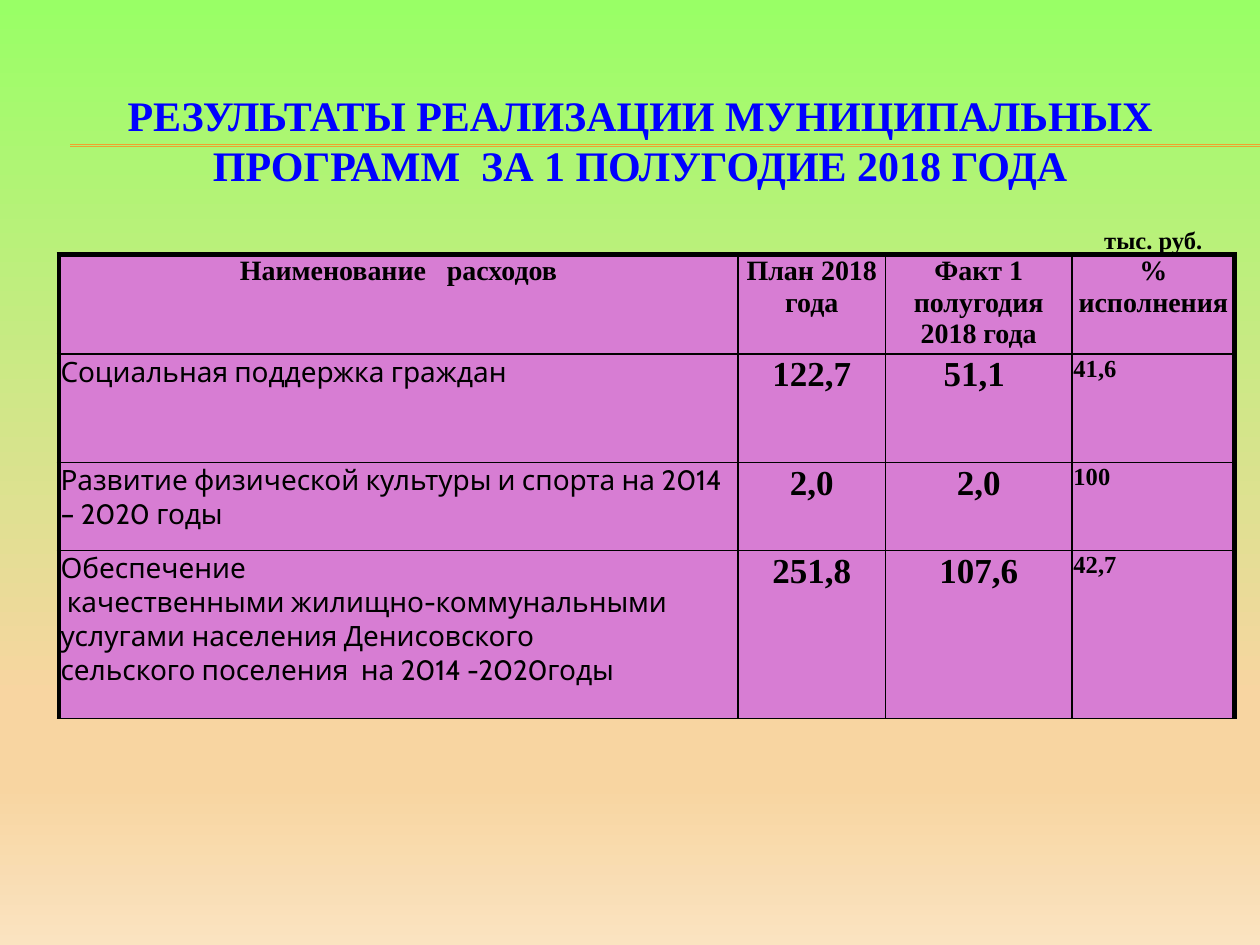
from lxml.etree import SubElement
from pptx import Presentation
from pptx.dml.color import RGBColor
from pptx.enum.shapes import MSO_CONNECTOR
from pptx.enum.text import MSO_ANCHOR, MSO_AUTO_SIZE, PP_ALIGN
from pptx.oxml.ns import qn
from pptx.util import Cm, Pt

BLACK = RGBColor(0x00, 0x00, 0x00)
BLUE = RGBColor(0x00, 0x00, 0xFF)
ORANGE = RGBColor(0xF0, 0xA2, 0x2E)
ORCHID = RGBColor(0xD7, 0x7D, 0xD3)
GREEN = RGBColor(0x99, 0xFF, 0x66)
SAND = RGBColor(0xF8, 0xD5, 0xA1)
CREAM = RGBColor(0xFA, 0xE3, 0xC0)

SERIF = "Times New Roman"
SANS = "Cabin"
THICK, THIN, HAIR = 3, 1, 0.5

COLUMN_WIDTHS = (13.69, 2.97, 3.76, 3.28)
ROW_HEIGHTS = (0.76, 2.01, 2.18, 1.78, 3.38)
ROW_LINES = (THICK, THIN, THIN, HAIR, HAIR)
COLUMN_LINES = (THICK, THIN, THIN, THIN, THICK)
HEADERS = ("Наименование   расходов", "План 2018 года", "Факт 1 полугодия 2018 года", "% исполнения")
PROGRAMS = (
    (("Социальная поддержка граждан",), "122,7", "51,1 ", "41,6"),
    (("Развитие физической культуры и спорта на 2014 – 2020 годы",), "2,0", "2,0", "100"),
    (
        (
            "Обеспечение",
            " качественными жилищно-коммунальными",
            "услугами населения Денисовского",
            "сельского поселения  на 2014 -2020годы",
        ),
        "251,8", "107,6", "42,7",
    ),
)


def paint_background(slide):
    fill = slide.background.fill
    fill.gradient()
    fill.gradient_angle = 270
    stop_list = next(slide.element.iter(qn("a:gsLst")))
    for stop in list(stop_list):
        stop_list.remove(stop)
    for percent, color in ((0, GREEN), (74, SAND), (83, SAND), (100, CREAM)):
        stop = SubElement(stop_list, qn("a:gs"), pos=str(percent * 1000))
        SubElement(stop, qn("a:srgbClr"), val=str(color))


def add_rule(slide, top):
    rule = slide.shapes.add_connector(MSO_CONNECTOR.STRAIGHT, Cm(1.42), Cm(top), Cm(25.4), Cm(top))
    rule.line.color.rgb = ORANGE
    rule.line.width = Pt(0.75)
    SubElement(rule.element.spPr, qn("a:effectLst"))


def add_run(paragraph, text, size, font=SERIF, bold=True, color=BLACK):
    run = paragraph.add_run()
    run.text = text
    run.font.size = Pt(size)
    run.font.name = font
    run.font.bold = bold
    run.font.color.rgb = color


def place_title(slide, text):
    title = slide.shapes.title
    title.left, title.top, title.width, title.height = Cm(0.84), Cm(1.27), Cm(24.13), Cm(3.1)
    title.element.getparent().append(title.element)
    frame = title.text_frame
    frame.word_wrap = True
    frame.auto_size = MSO_AUTO_SIZE.NONE
    frame.vertical_anchor = MSO_ANCHOR.MIDDLE
    frame.paragraphs[0].alignment = PP_ALIGN.CENTER
    add_run(frame.paragraphs[0], text, 24, color=BLUE)


def set_borders(cell, left, right, top, bottom):
    properties = cell._tc.get_or_add_tcPr()
    sides = (("a:lnL", left), ("a:lnR", right), ("a:lnT", top), ("a:lnB", bottom))
    for index, (tag, width) in enumerate(sides):
        line = SubElement(properties, qn(tag), w=str(Pt(width)))
        properties.insert(index, line)
        if width:
            fill = SubElement(line, qn("a:solidFill"))
            SubElement(fill, qn("a:srgbClr"), val=str(BLACK))
        else:
            SubElement(line, qn("a:noFill"))


def write_cell(cell, lines, size, alignment=None, font=SERIF, bold=True):
    frame = cell.text_frame
    for index, text in enumerate(lines):
        paragraph = frame.add_paragraph() if index else frame.paragraphs[0]
        paragraph.alignment = alignment
        add_run(paragraph, text, size, font, bold)


def format_cells(table):
    for row in range(len(ROW_HEIGHTS)):
        for column in range(len(COLUMN_WIDTHS)):
            cell = table.cell(row, column)
            cell.margin_left = cell.margin_right = cell.margin_top = Cm(0.03)
            cell.margin_bottom = 0
            if row:
                cell.fill.solid()
                cell.fill.fore_color.rgb = ORCHID
                set_borders(cell, *COLUMN_LINES[column:column + 2], *ROW_LINES[row - 1:row + 1])
            else:
                cell.fill.background()
                set_borders(cell, 0, 0, 0, THICK)
                ending = cell.text_frame.paragraphs[0]._p.get_or_add_endParaRPr()
                ending.set("sz", "1400")


def add_program_table(slide):
    frame = slide.shapes.add_table(
        len(ROW_HEIGHTS), len(COLUMN_WIDTHS), Cm(1.19), Cm(4.37), Cm(sum(COLUMN_WIDTHS)), Cm(sum(ROW_HEIGHTS))
    )
    table = frame.table
    table.first_row = table.horz_banding = False
    for column, width in zip(table.columns, COLUMN_WIDTHS):
        column.width = Cm(width)
    for row, height in zip(table.rows, ROW_HEIGHTS):
        row.height = Cm(height)
    format_cells(table)
    table.cell(0, 1).merge(table.cell(0, 2))
    unit_cell = table.cell(0, 3)
    unit_cell.vertical_anchor = MSO_ANCHOR.BOTTOM
    write_cell(unit_cell, [" тыс. руб. "], 14, PP_ALIGN.CENTER)
    for column, header in enumerate(HEADERS):
        write_cell(table.cell(1, column), [header], 16, PP_ALIGN.CENTER)
    for row, (name_lines, plan, fact, percent) in enumerate(PROGRAMS, start=2):
        write_cell(table.cell(row, 0), name_lines, 16, font=SANS, bold=False)
        write_cell(table.cell(row, 1), [plan], 20, PP_ALIGN.CENTER)
        write_cell(table.cell(row, 2), [fact], 20, PP_ALIGN.CENTER)
        write_cell(table.cell(row, 3), [percent], 14)


def main():
    presentation = Presentation()
    presentation.slide_width, presentation.slide_height = Cm(25.4), Cm(19.05)
    slide = presentation.slides.add_slide(presentation.slide_layouts[5])
    paint_background(slide)
    for top in (2.92, 2.95):
        add_rule(slide, top)
    place_title(slide, "РЕЗУЛЬТАТЫ РЕАЛИЗАЦИИ МУНИЦИПАЛЬНЫХ ПРОГРАММ  ЗА 1 ПОЛУГОДИЕ 2018 ГОДА")
    add_program_table(slide)
    presentation.save("out.pptx")


if __name__ == "__main__":
    main()
